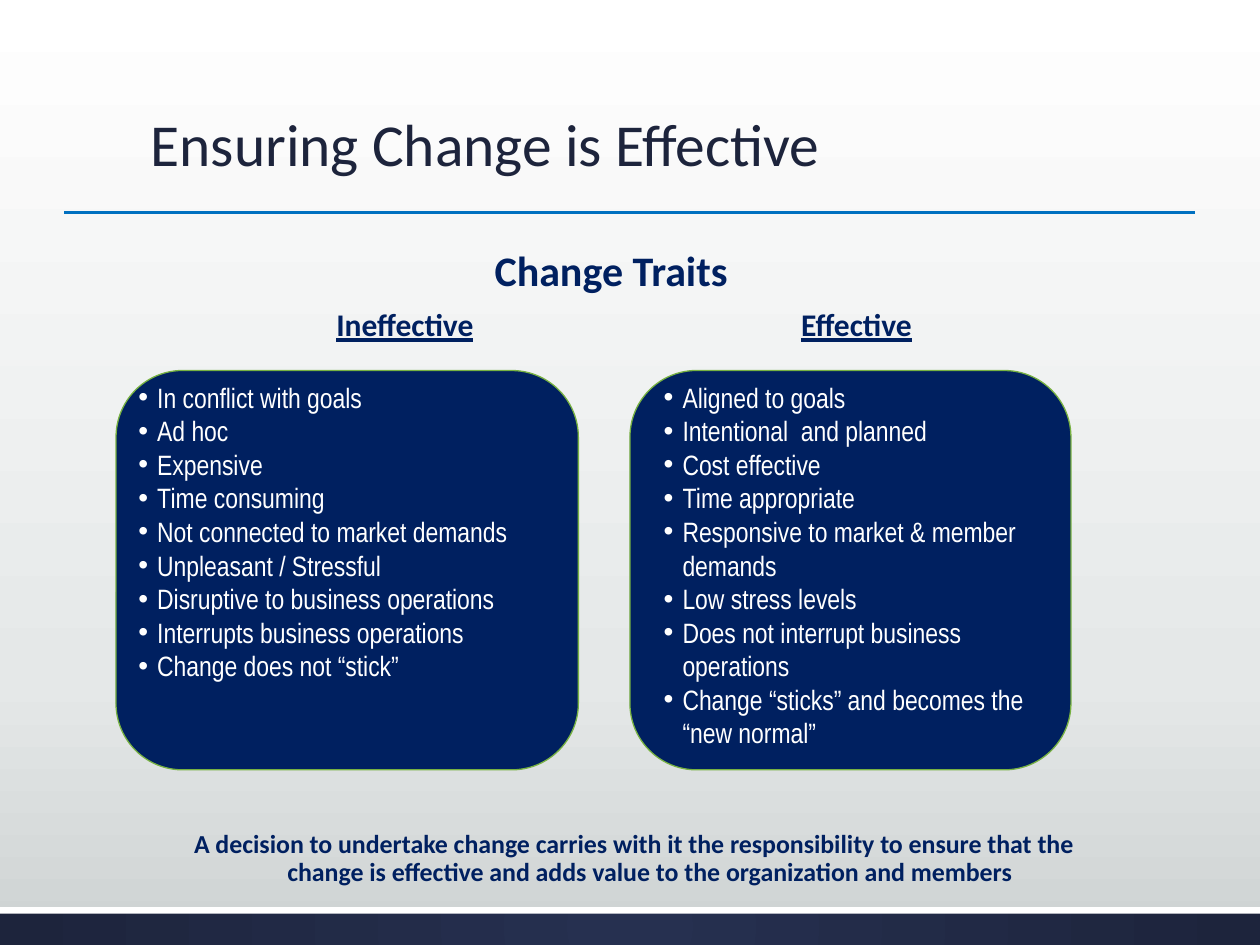
from dataclasses import dataclass

from lxml.etree import SubElement
from pptx import Presentation
from pptx.dml.color import RGBColor as Rgb
from pptx.enum.shapes import MSO_CONNECTOR as Link, MSO_SHAPE as Form
from pptx.enum.text import MSO_ANCHOR as Anchor, PP_ALIGN as Align
from pptx.oxml.ns import qn
from pptx.util import Cm, Pt


@dataclass(frozen=True)
class Theme:
    navy: str = "002060"
    ink: str = "1D243C"
    dusk: str = "263050"
    blue: str = "0070C0"
    green: str = "77B142"
    white: str = "FFFFFF"
    sky: tuple = ((0, "FFFFFF"), (72, "E5E8E8"), (100, "CDD2D2"))
    sans: str = "Calibri"
    slim: str = "Arial Narrow"
    title: float = 34
    head: float = 24
    label: float = 18
    item: float = 16
    note: float = 14.8


T = Theme()

BAD = [
    "In conflict with goals",
    "Ad hoc",
    "Expensive",
    "Time consuming",
    "Not connected to market demands",
    "Unpleasant / Stressful",
    "Disruptive to business operations",
    "Interrupts business operations",
    "Change does not “stick”",
]
GOOD = [
    "Aligned to goals",
    "Intentional  and planned",
    "Cost effective",
    "Time appropriate",
    "Responsive to market & member demands",
    "Low stress levels",
    "Does not interrupt business operations",
    "Change “sticks” and becomes the “new normal”",
]
NOTE = ("A decision to undertake change carries with it the responsibility to ensure "
        "that the change is effective and adds value to the organization and members")


# Shared helpers
def blend(owner, fill, stops, round_=False):
    """Gradient with any number of stops, downward or from the centre."""
    fill.gradient()
    grad = owner.element.find(".//" + qn("a:gradFill"))
    for child in list(grad):
        grad.remove(child)
    group = SubElement(grad, qn("a:gsLst"))
    for pos, tint in stops:
        stop = SubElement(group, qn("a:gs"), pos=str(pos * 1000))
        SubElement(stop, qn("a:srgbClr"), val=tint)
    if round_:
        way = SubElement(grad, qn("a:path"), path="circle")
        SubElement(way, qn("a:fillToRect"), **dict.fromkeys("ltrb", "50000"))
    else:
        SubElement(grad, qn("a:lin"), ang="5400000", scaled="0")


def add_form(slide, form, box, tint, edge=None):
    shape = slide.shapes.add_shape(form, *map(Cm, box))
    shape.shadow.inherit = False
    shape.fill.solid()
    shape.fill.fore_color.rgb = Rgb.from_string(tint)
    if edge:
        shape.line.color.rgb = Rgb.from_string(edge)
        shape.line.width = Pt(0.75)
    else:
        shape.line.fill.background()
    return shape


def add_frame(slide, box):
    frame = slide.shapes.add_textbox(*map(Cm, box)).text_frame
    frame.word_wrap = True
    return frame


def style(para, size, tint, face=T.sans, bold=False):
    font = para.font
    font.name, font.size, font.bold = face, Pt(size), bold
    font.color.rgb = Rgb.from_string(tint)


def indent(para, left, first):
    props = para._p.get_or_add_pPr()
    props.set("marL", str(Cm(left)))
    props.set("indent", str(Cm(first)))
    return props


# Regions
def add_base(slide, box):
    x, y, w, h = box
    bar = add_form(slide, Form.RECTANGLE, box, T.ink)
    blend(bar, bar.fill, ((0, T.dusk), (100, T.ink)), round_=True)
    add_form(slide, Form.RECTANGLE, (x, y, w, 0.13), T.white)


def add_title(slide, box):
    x, y, w, h = box
    frame = add_frame(slide, box)
    frame.vertical_anchor = Anchor.BOTTOM
    para = frame.paragraphs[0]
    para.text = "Ensuring Change is Effective"
    para.line_spacing = 0.9
    style(para, T.title, T.ink)
    # Rule under the title
    level = Cm(y + h + 0.55)
    rule = slide.shapes.add_connector(Link.STRAIGHT, Cm(1.3), level, Cm(24.08), level)
    rule.line.color.rgb = Rgb.from_string(T.blue)
    rule.line.width = Pt(1.5)
    SubElement(rule.element.spPr, qn("a:effectLst"))


def add_heads(slide, box):
    frame = add_frame(slide, box)
    top = frame.paragraphs[0]
    top.text = "Change Traits"
    top.alignment = Align.CENTER
    style(top, T.head, T.navy, bold=True)

    # Column labels on tab stops
    row = frame.add_paragraph()
    row.space_before = Pt(6)
    tabs = SubElement(row._p.get_or_add_pPr(), qn("a:tabLst"))
    for stop, label in ((3, "Ineffective"), (12.37, "Effective")):
        SubElement(tabs, qn("a:tab"), pos=str(Cm(stop)), algn="l")
        row.add_run().text = "\t"
        run = row.add_run()
        run.text = label
        run.font.underline = True
    style(row, T.label, T.navy, bold=True)


def add_card(slide, box, inset, width, items):
    x, y, w, h = box
    add_form(slide, Form.ROUNDED_RECTANGLE, box, T.navy, T.green)
    frame = add_frame(slide, (x + inset, y + 0.07, width, h - 0.14))
    for i, item in enumerate(items):
        para = frame.add_paragraph() if i else frame.paragraphs[0]
        para.text = item
        props = indent(para, 0.38, -0.38)
        SubElement(props, qn("a:buFont"), typeface="Arial")
        SubElement(props, qn("a:buChar"), char="•")
        style(para, T.item, T.white, T.slim)


def add_note(slide, box):
    para = add_frame(slide, box).paragraphs[0]
    para.text = NOTE
    para.alignment = Align.CENTER
    para.line_spacing = 0.9
    indent(para, 0.76, -0.64)
    style(para, T.note, T.navy, bold=True)


def main():
    deck = Presentation()
    deck.slide_width, deck.slide_height = Cm(25.4), Cm(19.05)
    slide = deck.slides.add_slide(deck.slide_layouts[6])
    blend(slide, slide.background.fill, T.sky)
    add_base(slide, (0, 18.29, 25.4, 0.76))
    add_title(slide, (2.79, 1.3, 19.81, 2.44))
    add_heads(slide, (3.53, 4.8, 17.58, 2.44))
    add_card(slide, (2.34, 7.47, 9.32, 8.05), 0.2, 8.26, BAD)
    add_card(slide, (12.7, 7.47, 8.89, 8.05), 0.43, 8.69, GOOD)
    add_note(slide, (2.84, 16.64, 19.76, 1.47))
    deck.save("out.pptx")


if __name__ == "__main__":
    main()
